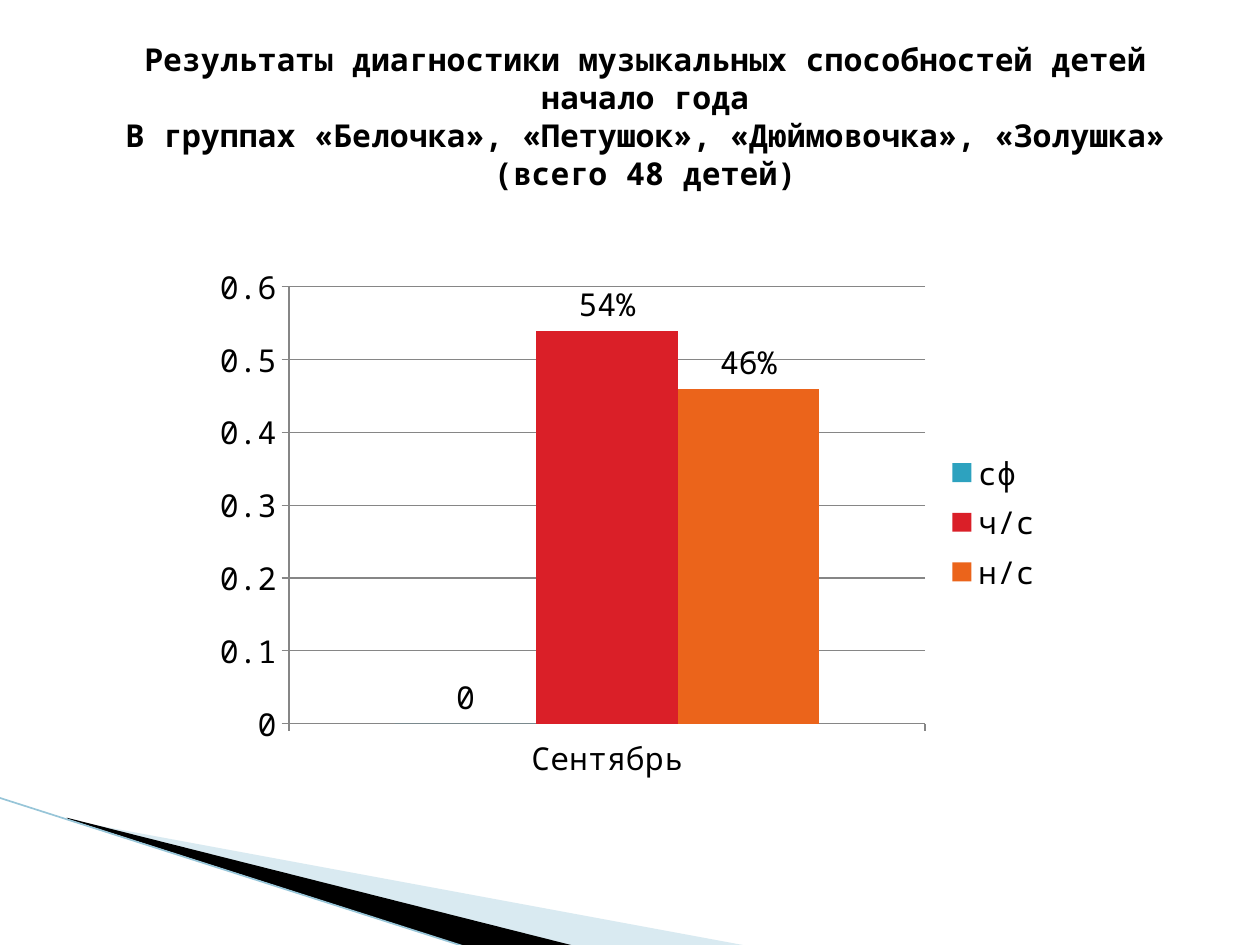
from lxml.etree import SubElement
from pptx import Presentation
from pptx.chart.data import CategoryChartData
from pptx.dml.color import RGBColor
from pptx.enum.chart import XL_CHART_TYPE, XL_LABEL_POSITION, XL_LEGEND_POSITION, XL_TICK_MARK
from pptx.enum.shapes import MSO_CONNECTOR
from pptx.enum.text import MSO_ANCHOR, PP_ALIGN
from pptx.oxml.ns import qn
from pptx.util import Inches, Pt

FONT = "Noto Sans Mono"
TITLE = (
    "Результаты диагностики музыкальных способностей детей начало года",
    "В группах «Белочка», «Петушок», «Дюймовочка», «Золушка»",
    "(всего 48 детей)",
)
CATEGORIES = ["Сентябрь"]
SERIES = [
    ("сф", [0], "2DA2BF", "General"),
    ("ч/с", [0.54], "DA1F28", "0%"),
    ("н/с", [0.46], "EB641B", "0%"),
]
WEDGES = [
    ([(0.55, 6.51), (5.95, 7.51), (4.56, 7.51), (0.55, 6.5)], "A0CBDC", 40),
    ([(0.53, 6.49), (4.57, 7.51), (3.72, 7.52), (0.54, 6.5)], "000000", 100),
]
EDGE = [(-0.01, 6.33), (3.71, 7.52)]


def color(value):
    """Turn a hex string into a colour."""
    return RGBColor.from_string(value)


def style_font(font, bold=False):
    """Apply the slide's common text style."""
    font.name, font.size, font.bold = FONT, Pt(18), bold
    font.color.rgb = color("000000")


def add_title(slide):
    """Place and format the centred title."""
    title = slide.shapes.title
    title.left, title.top, title.width, title.height = map(Inches, (0.67, 0.29, 8.9, 1.26))
    frame = title.text_frame
    frame.word_wrap = True
    frame.vertical_anchor = MSO_ANCHOR.MIDDLE
    paragraph = frame.paragraphs[0]
    paragraph.text = "\v".join(TITLE)
    paragraph.alignment = PP_ALIGN.CENTER
    for run in paragraph.runs:
        style_font(run.font, bold=True)


def add_wedge(slide, points, fill, opacity):
    """Draw one corner wedge."""
    start, *others = [(Inches(x), Inches(y)) for x, y in points]
    builder = slide.shapes.build_freeform(*start)
    builder.add_line_segments(others, close=True)
    wedge = builder.convert_to_shape()
    wedge.shadow.inherit = False
    wedge.line.fill.background()
    wedge.fill.solid()
    wedge.fill.fore_color.rgb = color(fill)
    if opacity < 100:
        tint = wedge.fill._xPr.find(".//" + qn("a:srgbClr"))
        SubElement(tint, qn("a:alpha"), val=str(opacity * 1000))


def add_edge(slide):
    """Draw the thin line along the wedges."""
    ends = [Inches(value) for point in EDGE for value in point]
    edge = slide.shapes.add_connector(MSO_CONNECTOR.STRAIGHT, *ends)
    edge.line.color.rgb = color("97C5D8")
    edge.line.width = Pt(0.95)
    SubElement(edge._element.spPr, qn("a:effectLst"))


def add_results_chart(slide):
    """Add the column chart of diagnostic results."""
    data = CategoryChartData()
    data.categories = CATEGORIES
    for name, values, _, number_format in SERIES:
        data.add_series(name, values, number_format)
    place = map(Inches, (1.61, 2.02, 6.77, 4.25))
    chart = slide.shapes.add_chart(XL_CHART_TYPE.COLUMN_CLUSTERED, *place, data).chart
    style_font(chart.font)
    chart.has_title = False
    chart.has_legend = True
    chart.legend.position = XL_LEGEND_POSITION.RIGHT
    chart.legend.include_in_layout = False

    value_axis = chart.value_axis
    value_axis.has_major_gridlines = True
    value_axis.tick_labels.number_format = "General"
    value_axis.tick_labels.number_format_is_linked = False
    for axis in (chart.category_axis, value_axis):
        axis.major_tick_mark = XL_TICK_MARK.OUTSIDE
        axis.minor_tick_mark = XL_TICK_MARK.NONE
    for part in (chart.category_axis, value_axis, value_axis.major_gridlines):
        part.format.line.color.rgb = color("868686")
        part.format.line.width = Pt(0.75)

    plot = chart.plots[0]
    plot.gap_width = 150
    plot.overlap = 0
    plot.vary_by_categories = False
    for series, (_, _, fill, number_format) in zip(plot.series, SERIES):
        series.format.fill.solid()
        series.format.fill.fore_color.rgb = color(fill)
        series.invert_if_negative = False
        labels = series.data_labels
        labels.show_value = True
        labels.position = XL_LABEL_POSITION.OUTSIDE_END
        labels.number_format = number_format
        labels.number_format_is_linked = False
        style_font(labels.font)


def main():
    """Build and save the slide."""
    presentation = Presentation()
    presentation.slide_width, presentation.slide_height = Inches(10), Inches(7.5)
    slide = presentation.slides.add_slide(presentation.slide_layouts[5])
    for wedge in WEDGES:
        add_wedge(slide, *wedge)
    add_edge(slide)
    add_title(slide)
    add_results_chart(slide)
    presentation.save("out.pptx")


if __name__ == "__main__":
    main()
